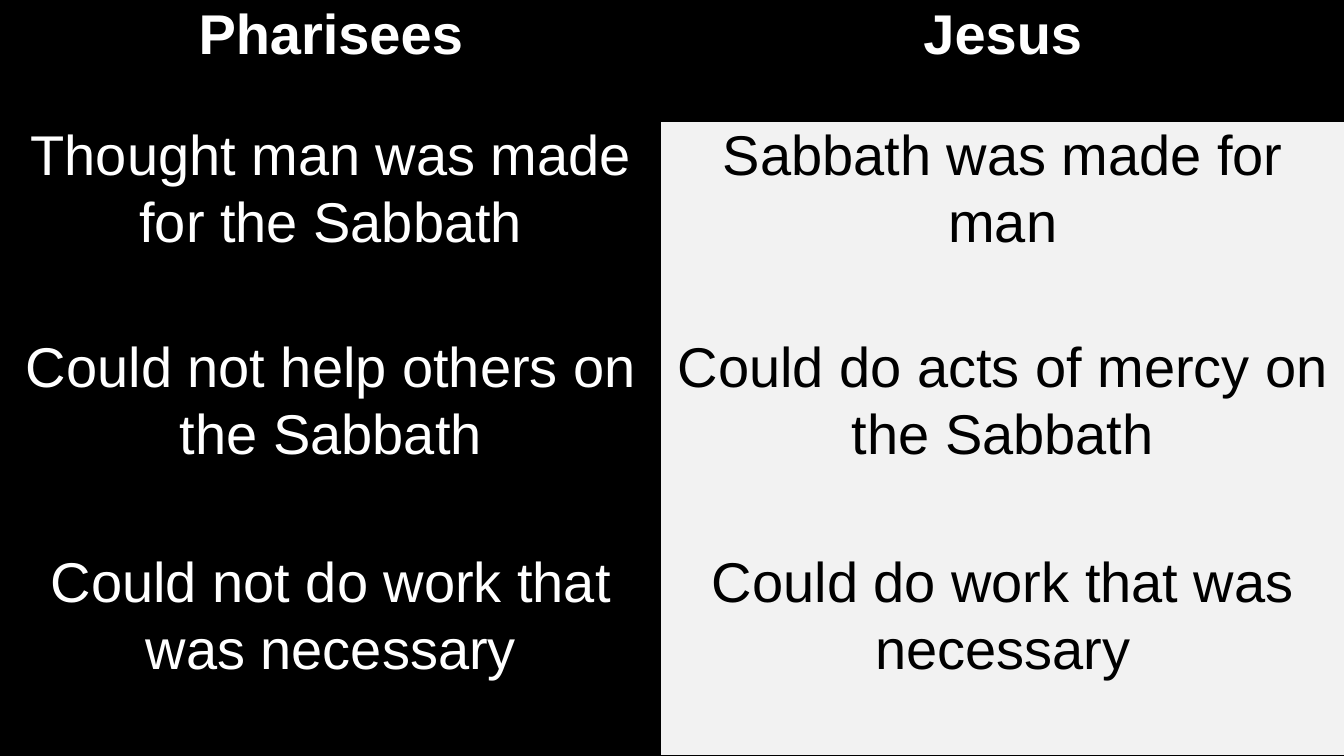
from lxml import etree
from pptx import Presentation
from pptx import util as u
from pptx.dml import color
from pptx.enum import text
from pptx.oxml import ns

ROWS = [
    ("Pharisees", "Jesus"),
    ("Thought man was made for the Sabbath", "Sabbath was made for man"),
    ("Could not help others on the Sabbath", "Could do acts of mercy on the Sabbath"),
    ("Could not do work that was necessary", "Could do work that was necessary"),
]
COLUMN_WIDTHS = (472.5, 487.5)
ROW_HEIGHTS = (86.4, 151.2, 153.4, 149)
BLACK, WHITE, GREY = "000000", "FFFFFF", "F2F2F2"
NO_STYLE_NO_GRID = "{2D5ABB26-0587-4C30-8999-92F81FD0307C}"


def rgb(value):
    return color.RGBColor.from_string(value)


def add_border(cell, side):
    """Draw a 2 pt black line on one side (T or B) of a cell."""
    properties = cell._tc.get_or_add_tcPr()
    line = etree.SubElement(properties, ns.qn(f"a:ln{side}"), w=str(u.Pt(2)))
    fill = etree.SubElement(line, ns.qn("a:solidFill"))
    etree.SubElement(fill, ns.qn("a:srgbClr"), val=BLACK)


def fill_cell(cell, wording, background, ink, bold):
    cell.fill.solid()
    cell.fill.fore_color.rgb = rgb(background)
    cell.margin_left = cell.margin_right = u.Pt(5)
    cell.margin_top = cell.margin_bottom = 0
    paragraph = cell.text_frame.paragraphs[0]
    paragraph.alignment = text.PP_ALIGN.CENTER
    paragraph.line_spacing = 1.07
    run = paragraph.add_run()
    run.text = wording
    run.font.name = "Arial"
    run.font.size = u.Pt(40)
    run.font.bold = bold
    run.font.color.rgb = rgb(ink)


def main():
    presentation = Presentation()
    presentation.slide_width = u.Pt(sum(COLUMN_WIDTHS))
    presentation.slide_height = u.Pt(sum(ROW_HEIGHTS))
    slide = presentation.slides.add_slide(presentation.slide_layouts[6])
    frame = slide.shapes.add_table(len(ROWS), len(COLUMN_WIDTHS), 0, 0,
                                   presentation.slide_width, presentation.slide_height)
    table = frame.table
    table.horz_banding = False
    next(frame._element.iter(ns.qn("a:tableStyleId"))).text = NO_STYLE_NO_GRID
    for column, width in zip(table.columns, COLUMN_WIDTHS):
        column.width = u.Pt(width)
    for row, height in zip(table.rows, ROW_HEIGHTS):
        row.height = u.Pt(height)

    bordered_sides = {0: "TB", len(ROWS) - 1: "B"}
    for i, row in enumerate(ROWS):
        for j, wording in enumerate(row):
            cell = table.cell(i, j)
            for side in bordered_sides.get(i, ""):
                add_border(cell, side)
            is_header = i == 0
            dark = is_header or j == 0
            fill_cell(cell, wording, BLACK if dark else GREY,
                      WHITE if dark else BLACK, is_header)
    presentation.save("out.pptx")


if __name__ == "__main__":
    main()
